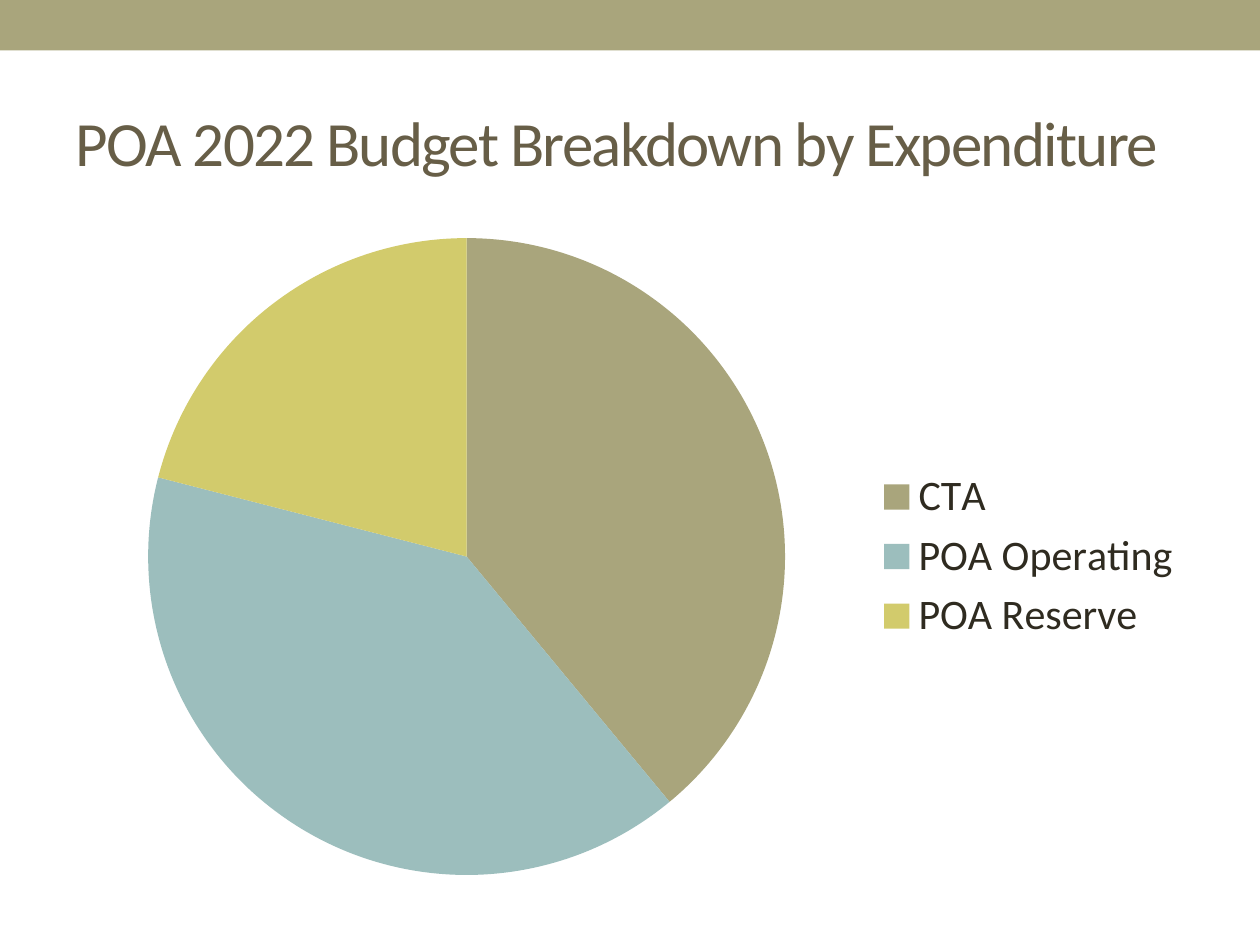
from pptx import Presentation
from pptx.chart.data import CategoryChartData
from pptx.dml.color import RGBColor
from pptx.enum.chart import XL_CHART_TYPE, XL_LEGEND_POSITION
from pptx.enum.shapes import MSO_SHAPE
from pptx.enum.text import MSO_ANCHOR, PP_ALIGN
from pptx.util import Cm, Pt


def color(value):
    return RGBColor.from_string(value)


class SlideBuilder:
    font_name = "Calibri"
    title_color = "675E47"
    text_color = "2F2B20"
    accent_color = "A9A57C"

    def __init__(self, presentation):
        self.slide = presentation.slides.add_slide(presentation.slide_layouts[5])

    def style_font(self, font, size, font_color):
        font.name = self.font_name
        font.size = Pt(size)
        font.color.rgb = color(font_color)

    def add_bar(self, left, top, width, height):
        shape = self.slide.shapes.add_shape(
            MSO_SHAPE.RECTANGLE, Cm(left), Cm(top), Cm(width), Cm(height))
        shape.shadow.inherit = False
        shape.fill.solid()
        shape.fill.fore_color.rgb = color(self.accent_color)
        shape.line.fill.background()

    def set_title(self, text, left, top, width, height):
        title = self.slide.shapes.title
        title.left, title.top = Cm(left), Cm(top)
        title.width, title.height = Cm(width), Cm(height)
        title.text_frame.word_wrap = True
        title.text_frame.vertical_anchor = MSO_ANCHOR.MIDDLE
        paragraph = title.text_frame.paragraphs[0]
        paragraph.alignment = PP_ALIGN.LEFT
        run = paragraph.add_run()
        run.text = text
        self.style_font(run.font, 36, self.title_color)
        run.font._element.set("spc", "-100")

    def add_pie(self, slices, left, top, width, height):
        chart_data = CategoryChartData()
        chart_data.categories = [label for label, _, _ in slices]
        chart_data.add_series("", [value for _, value, _ in slices])
        chart = self.slide.shapes.add_chart(
            XL_CHART_TYPE.PIE, Cm(left), Cm(top), Cm(width), Cm(height), chart_data).chart
        self.style_font(chart.font, 10, self.text_color)
        chart.has_title = False
        chart.has_legend = True
        chart.legend.position = XL_LEGEND_POSITION.RIGHT
        chart.legend.include_in_layout = False
        self.style_font(chart.legend.font, 24, self.text_color)
        plot = chart.plots[0]
        plot.vary_by_categories = True
        for index, (_, _, slice_color) in enumerate(slices):
            point = plot.series[0].points[index]
            point.format.fill.solid()
            point.format.fill.fore_color.rgb = color(slice_color)
            point.format.line.fill.background()


def main():
    presentation = Presentation()
    presentation.slide_width = Cm(25.4)
    presentation.slide_height = Cm(19.05)
    builder = SlideBuilder(presentation)
    builder.add_bar(0, 0, 25.4, 1.02)
    builder.set_title("POA 2022 Budget Breakdown by Expenditure", 1.27, 1.48, 22.86, 2.75)
    slices = [
        ("CTA", 39, builder.accent_color),
        ("POA Operating", 40, "9CBEBD"),
        ("POA Reserve", 21, "D2CB6C"),
    ]
    builder.add_pie(slices, 1.27, 4.45, 22.86, 13.54)
    presentation.save("out.pptx")


if __name__ == "__main__":
    main()
